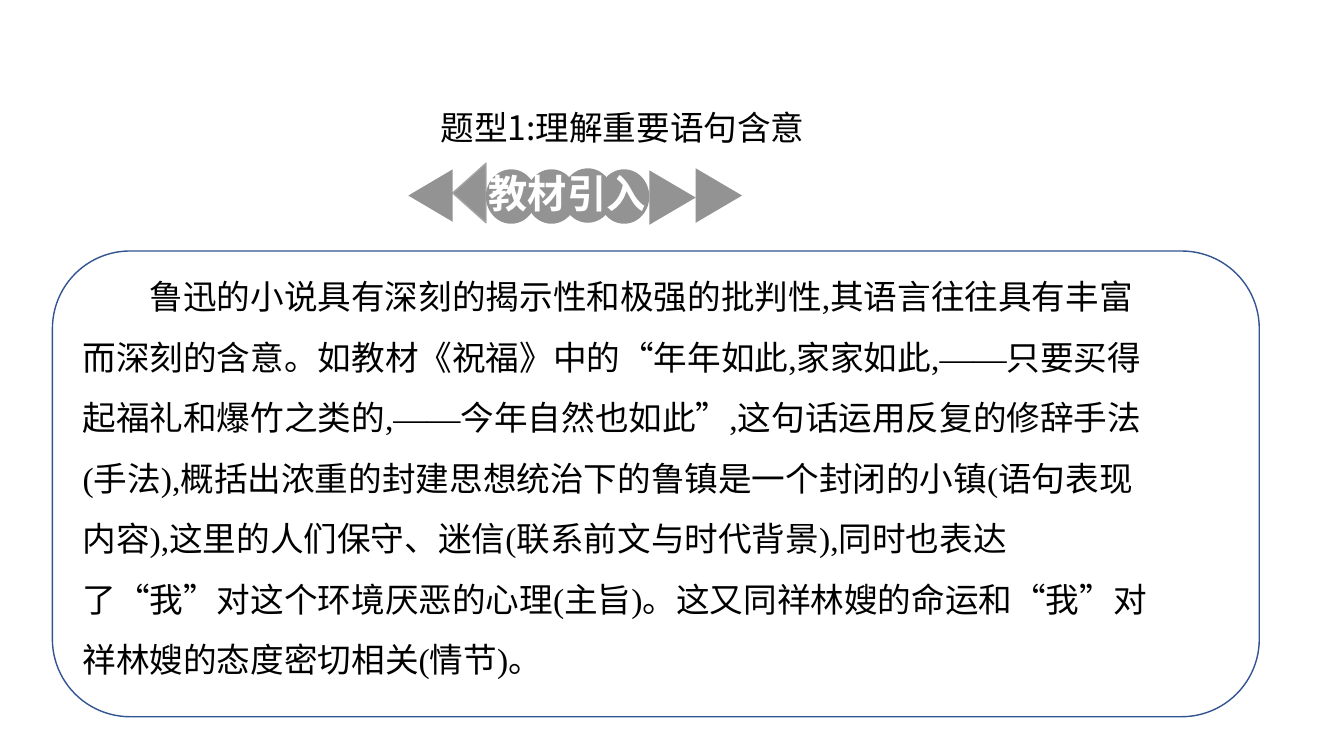
from dataclasses import dataclass

from lxml.etree import SubElement
from pptx import Presentation
from pptx.dml.color import RGBColor
from pptx.enum.lang import MSO_LANGUAGE_ID
from pptx.enum.shapes import MSO_SHAPE
from pptx.enum.text import MSO_ANCHOR, PP_ALIGN
from pptx.oxml.ns import qn
from pptx.util import Inches, Pt


@dataclass(frozen=True)
class Theme:
    ink: str = "000000"
    white: str = "FFFFFF"
    badge: str = "939393"
    badge_edge: str = "A5A5A5"
    frame: str = "325491"
    text_size: int = 24
    badge_size: int = 28
    chinese_font: str = "Noto Sans CJK SC"
    latin_font: str = "Times New Roman"


THEME = Theme()

TITLE = "题型1:理解重要语句含意"
BADGE = "教材引入"
PASSAGE = (
    "鲁迅的小说具有深刻的揭示性和极强的批判性,其语言往往具有丰富而深刻的含意。"
    "如教材《祝福》中的“年年如此,家家如此,——只要买得起福礼和爆竹之类的,——今年自然也如此”,"
    "这句话运用反复的修辞手法(手法),概括出浓重的封建思想统治下的鲁镇是一个封闭的小镇(语句表现内容),"
    "这里的人们保守、迷信(联系前文与时代背景),同时也表达了“我”对这个环境厌恶的心理(主旨)。"
    "这又同祥林嫂的命运和“我”对祥林嫂的态度密切相关(情节)。"
)


def add_text(page, place, text, size, color, font_name,
             bold=False, indent_characters=0, **paragraph_format):
    box = page.shapes.add_textbox(*map(Inches, place))
    box.text_frame.word_wrap = True
    box.text_frame.vertical_anchor = MSO_ANCHOR.TOP
    para = box.text_frame.paragraphs[0]
    for name, value in paragraph_format.items():
        setattr(para, name, value)
    # First-line indent, measured in full-width characters
    if indent_characters:
        properties = para._p.get_or_add_pPr()
        properties.set("marL", "0")
        properties.set("indent", str(Pt(size * indent_characters)))
    span = para.add_run()
    span.text = text
    font_format = {
        "name": font_name,
        "size": Pt(size),
        "bold": bold,
        "language_id": MSO_LANGUAGE_ID.SIMPLIFIED_CHINESE,
    }
    for name, value in font_format.items():
        setattr(span.font, name, value)
    span.font.color.rgb = RGBColor.from_string(color)
    # Chinese characters take their own typeface
    east_asian = SubElement(span.font._element, qn("a:ea"))
    east_asian.set("typeface", THEME.chinese_font)


def add_outline(page, kind, place, fill=None, line=None, rotation=0):
    shape = page.shapes.add_shape(kind, *map(Inches, place))
    shape.shadow.inherit = False
    shape.rotation = rotation
    if fill:
        shape.fill.solid()
        shape.fill.fore_color.rgb = RGBColor.from_string(fill)
    else:
        shape.fill.background()
    if line:
        shape.line.color.rgb = RGBColor.from_string(line)
        shape.line.width = Pt(1)
    else:
        shape.line.fill.background()


def add_arrow(page, place, rotation, line=None):
    add_outline(page, MSO_SHAPE.FLOWCHART_EXTRACT, place, THEME.badge, line, rotation)


def add_badge(page):
    # Circles behind the four characters
    add_arrow(page, (4.36, 1.75, 0.59, 0.33), 270, THEME.badge_edge)
    for left, top in ((4.82, 1.68), (5.22, 1.68), (5.58, 1.67), (5.94, 1.68)):
        add_outline(page, MSO_SHAPE.OVAL, (left, top, 0.5, 0.54), THEME.badge)
    add_text(page, (4.75, 1.63, 1.8, 0.57), BADGE, THEME.badge_size,
             THEME.white, THEME.chinese_font, bold=True)
    # Outer arrows
    add_arrow(page, (4.01, 1.72, 0.52, 0.44), 270)
    for left, top in ((6.4, 1.73), (6.86, 1.71)):
        add_arrow(page, (left, top, 0.54, 0.46), 90)


def main():
    deck = Presentation()
    deck.slide_width, deck.slide_height = Inches(13.33), Inches(7.5)
    page = deck.slides.add_slide(deck.slide_layouts[6])

    # Heading and badge
    add_text(page, (2.91, 1.01, 6.53, 0.5), TITLE, THEME.text_size,
             THEME.ink, THEME.chinese_font, alignment=PP_ALIGN.CENTER)
    add_badge(page)

    # Framed passage
    add_text(page, (0.72, 2.49, 10.92, 2.07), PASSAGE, THEME.text_size,
             THEME.ink, THEME.latin_font, indent_characters=2, line_spacing=1.5)
    add_outline(page, MSO_SHAPE.ROUNDED_RECTANGLE, (0.52, 2.49, 11.97, 4.62),
                line=THEME.frame)

    deck.save("out.pptx")


if __name__ == "__main__":
    main()
